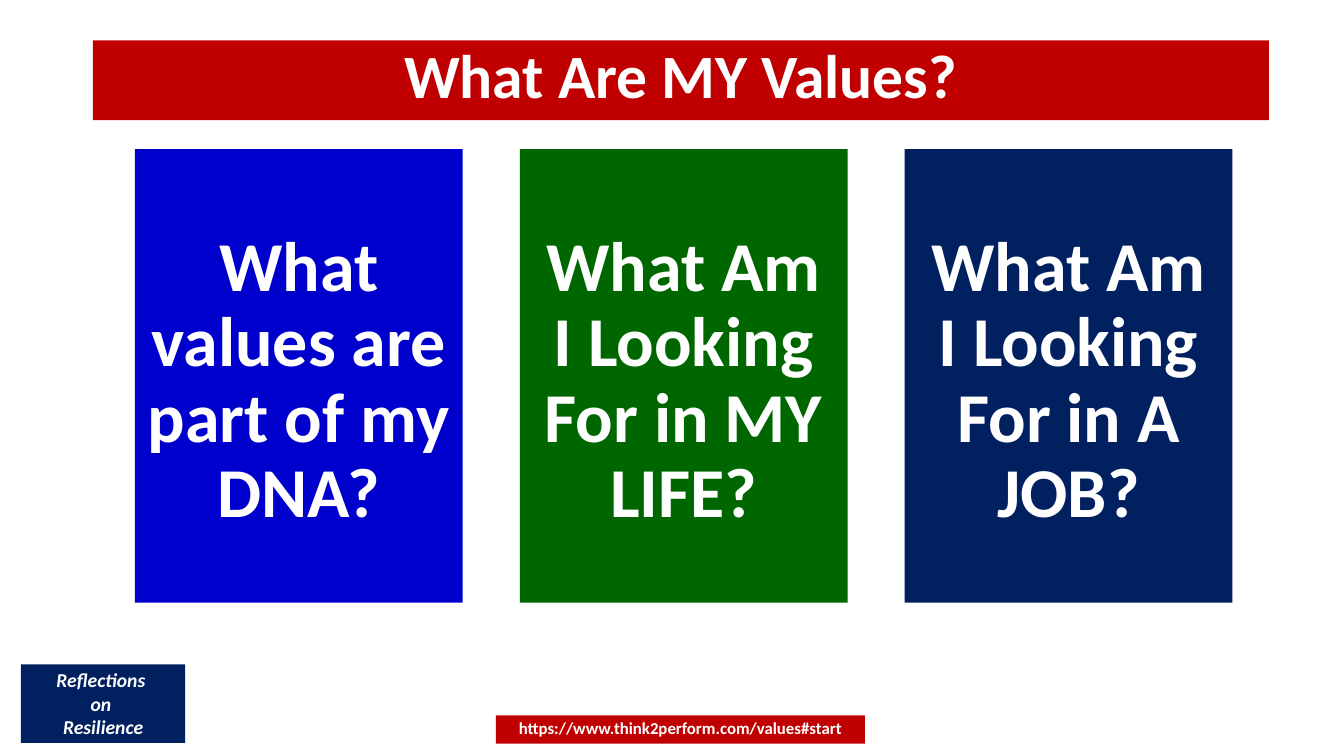
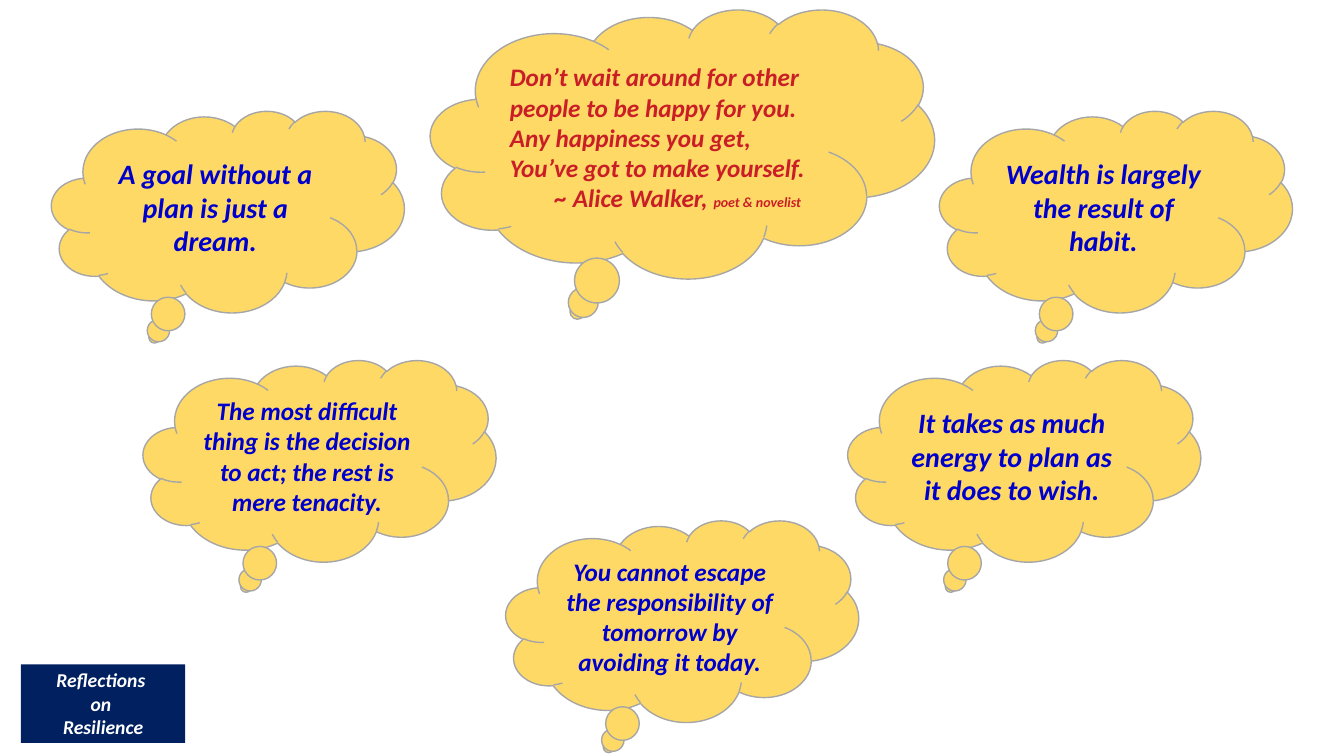
"""Build two slides about personal values and reflections on resilience."""
from pptx import Presentation
from pptx.dml.color import RGBColor
from pptx.enum.shapes import MSO_SHAPE
from pptx.enum.text import MSO_ANCHOR, PP_ALIGN
from pptx.util import Cm, Pt

RECTANGLE = MSO_SHAPE.RECTANGLE
CLOUD = MSO_SHAPE.CLOUD_CALLOUT
TOP, MIDDLE = MSO_ANCHOR.TOP, MSO_ANCHOR.MIDDLE
LEFT, CENTER = PP_ALIGN.LEFT, PP_ALIGN.CENTER

WHITE = RGBColor(0xFF, 0xFF, 0xFF)
NAVY = RGBColor(0x00, 0x20, 0x60)
BLUE = RGBColor(0x00, 0x00, 0xCC)
GREEN = RGBColor(0x00, 0x66, 0x00)
RED = RGBColor(0xC0, 0x00, 0x00)
QUOTE_RED = RGBColor(0xCA, 0x1E, 0x27)
GOLD = RGBColor(0xFF, 0xD9, 0x66)
GRAY = RGBColor(0xA6, 0xA6, 0xA6)

FONT = "Calibri"
SLIDE_WIDTH, SLIDE_HEIGHT = 33.87, 19.05
CLOUD_WIDTH, CLOUD_HEIGHT = 8.89, 5.08


def add_box(page, kind, left, top, width, height, fill, anchor=TOP):
    """Add a filled shape without outline or shadow."""
    box = page.shapes.add_shape(kind, Cm(left), Cm(top), Cm(width), Cm(height))
    box.shadow.inherit = False
    box.fill.solid()
    box.fill.fore_color.rgb = fill
    box.line.fill.background()
    box.text_frame.word_wrap = True
    box.text_frame.vertical_anchor = anchor
    return box


def write(box, lines, color, italic=False, align=CENTER, spacing=1.0):
    """Write lines, each a list of (text, size) spans, as bold paragraphs."""
    frame = box.text_frame
    for index, line in enumerate(lines):
        para = frame.add_paragraph() if index else frame.paragraphs[0]
        para.alignment = align
        para.line_spacing = spacing
        for text, size in line:
            span = para.add_run()
            span.text = text
            span.font.name = FONT
            span.font.size = Pt(size)
            span.font.bold = True
            span.font.italic = italic
            span.font.color.rgb = color


def add_panel(page, text, size, left, top, width, height, fill):
    """Add a rectangle with one centred white text."""
    box = add_box(page, RECTANGLE, left, top, width, height, fill)
    write(box, [[(text, size)]], WHITE, spacing=0.9)
    return box


def add_cloud(page, lines, left, top, color=BLUE, align=CENTER,
              width=CLOUD_WIDTH, height=CLOUD_HEIGHT):
    """Add a thought cloud with italic text."""
    cloud = add_box(page, CLOUD, left, top, width, height, GOLD, MIDDLE)
    cloud.line.color.rgb = GRAY
    cloud.line.width = Pt(1)
    write(cloud, lines, color, italic=True, align=align)
    return cloud


def add_page(deck):
    """Add a blank page with the shared corner badge."""
    page = deck.slides.add_slide(deck.slide_layouts[6])
    badge = add_box(page, RECTANGLE, 0.53, 16.74, 4.14, 1.98, NAVY, MIDDLE)
    lines = [[(text, 14)] for text in ("Reflections ", "on ", "Resilience")]
    write(badge, lines, WHITE, italic=True)
    return page


def build_values(deck):
    """Build the page with the three value questions."""
    page = add_page(deck)
    add_panel(page, "What Are MY Values?", 44, 2.34, 1.02, 29.64, 2.01, RED)
    add_panel(page, "https://www.think2perform.com/values#start", 12,
              12.5, 18.03, 9.3, 0.71, RED)
    questions = [
        ("What values are part of my DNA?", BLUE),
        ("What Am I Looking For in MY LIFE?", GREEN),
        ("What Am I Looking For in A JOB?", NAVY),
    ]
    for column, (question, fill) in enumerate(questions):
        card = add_panel(page, question, 50, 3.4 + column * 9.7,
                         3.76, 8.26, 11.43, fill)
        card.left = Cm(3.4 + column * 9.7)
        card.text_frame.margin_top = Cm(2.05)


def build_quotes(deck):
    """Build the page with the quotes in thought clouds."""
    page = add_page(deck)
    pairs = [
        (1.3, 2.79, ("A goal without a plan is just a dream.", 20),
         ("Wealth is largely the result of habit.", 20)),
        (3.61, 9.07,
         ("The most difficult thing is the decision to act; "
          "the rest is mere tenacity.", 18),
         ("It takes as much energy to plan as it does to wish.", 20)),
    ]
    for left, top, left_quote, right_quote in pairs:
        add_cloud(page, [[left_quote]], left, top)
        add_cloud(page, [[right_quote]], SLIDE_WIDTH - CLOUD_WIDTH - left, top)
    add_cloud(page, [[("You cannot escape the responsibility of tomorrow "
                       "by avoiding it today.", 18)]], 12.75, 13.11)
    main_quote = [
        [("Don’t wait around for other people to be happy for you.", 18)],
        [("Any happiness you get,", 18)],
        [("You’ve got to make yourself.", 18)],
        [("~ Alice Walker, ", 18), ("poet & novelist", 10)],
    ]
    cloud = add_cloud(page, main_quote, 10.85, 0.23, QUOTE_RED, LEFT,
                      12.7, 6.78)
    author = cloud.text_frame.paragraphs[-1]
    author._p.get_or_add_pPr().set("marL", str(Cm(1.13)))


def main():
    """Build and save the deck."""
    deck = Presentation()
    deck.slide_width, deck.slide_height = Cm(SLIDE_WIDTH), Cm(SLIDE_HEIGHT)
    build_values(deck)
    build_quotes(deck)
    deck.save("out.pptx")


if __name__ == "__main__":
    main()
